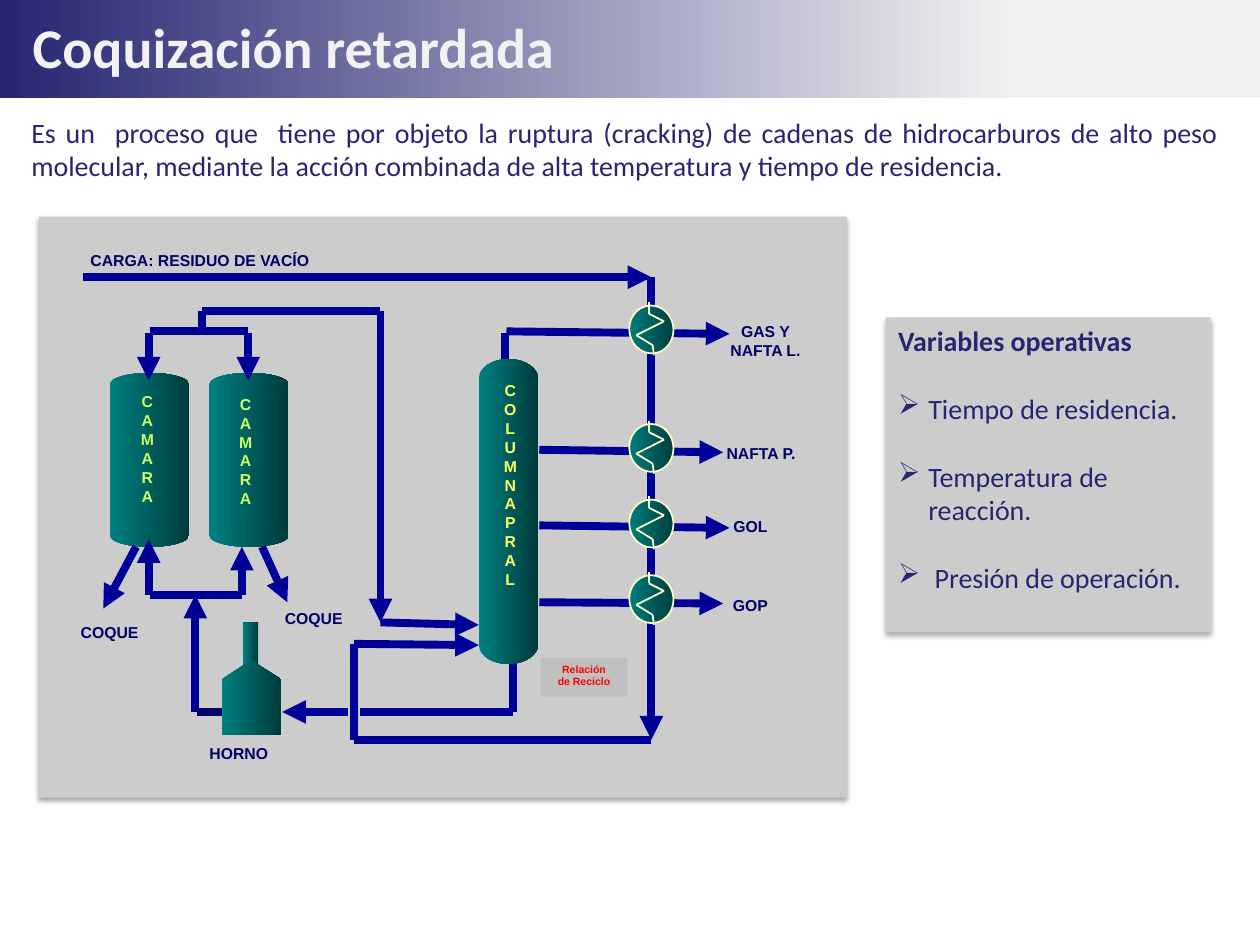
from dataclasses import dataclass
from itertools import pairwise

from pptx import Presentation
from pptx import util as u
from pptx.dml.color import RGBColor
from pptx.enum import shapes, text
from pptx.oxml import parse_xml
from pptx.oxml.ns import nsdecls, qn
from pptx.oxml.xmlchemy import OxmlElement

# Grid of 100 columns by 75 rows
WIDTH, HEIGHT = u.Inches(10), u.Inches(7.5)
COL, ROW = WIDTH / 100, HEIGHT / 75


@dataclass(frozen=True)
class Theme:
    navy: str = "262673"
    pale: str = "F2F2F2"
    panel: str = "CCCCCC"
    teal: str = "008080"
    deep_teal: str = "003B3B"
    pipe: str = "000099"
    label: str = "000066"
    coil: str = "FFFFCC"
    column_text: str = "FFFF66"
    drum_text: str = "CCFF66"
    note: str = "C0C0C0"
    alert: str = "FF0000"
    body_font: str = "Calibri"
    label_font: str = "Arial"
    title_size: float = 32
    body_size: float = 16
    label_size: float = 9
    note_size: float = 6
    pipe_width: float = 4.5
    coil_width: float = 1


T = Theme()
Box = tuple[float, float, float, float]  # column, row, columns, rows
Point = tuple[float, float]
KIND = shapes.MSO_SHAPE


@dataclass(frozen=True)
class Pipe:
    points: tuple[Point, ...]
    arrow: bool = True
    color: str = T.pipe
    width: float = T.pipe_width


@dataclass(frozen=True)
class Vessel:
    left: float
    top: float
    width: float
    height: float
    cap: float


@dataclass(frozen=True)
class Label:
    words: str
    box: Box
    color: str = T.label
    size: float = T.label_size
    wrap: bool = False


def place(box: Box) -> list[int]:
    return [round(n * unit) for n, unit in zip(box, (COL, ROW, COL, ROW))]


def add_solid(group, kind, box: Box, fill: str, end: str | None = None, stop: float = 1):
    """Add a preset shape, plain or shaded from left to right."""
    sp = group.add_shape(kind, *place(box))
    sp.shadow.inherit = False
    sp.line.fill.background()
    if end is None:
        sp.fill.solid()
        sp.fill.fore_color.rgb = RGBColor.from_string(fill)
        return sp
    sp.fill.gradient()
    sp.fill.gradient_angle = 0
    for mark, color, position in zip(sp.fill.gradient_stops, (fill, end), (0, stop)):
        mark.color.rgb = RGBColor.from_string(color)
        mark.position = position
    sp._element.spPr.find(qn("a:gradFill")).set("rotWithShape", "0")
    return sp


def add_panel(group, box: Box) -> None:
    sp = add_solid(group, KIND.RECTANGLE, box, T.panel)
    sp._element.spPr.find(qn("a:effectLst")).append(parse_xml(
        f'<a:outerShdw {nsdecls("a")} blurRad="{u.Pt(3.1)}" dist="{u.Pt(1.8)}" dir="5400000">'
        '<a:srgbClr val="000000"><a:alpha val="35000"/></a:srgbClr></a:outerShdw>'))


def add_steel(group, kind, box: Box):
    return add_solid(group, kind, box, T.teal, T.deep_teal)


def add_vessel(group, v: Vessel) -> None:
    half = v.cap / 2
    add_steel(group, KIND.RECTANGLE, (v.left, v.top + half, v.width, v.height - v.cap))
    for row in (v.top, v.top + v.height - v.cap):
        add_steel(group, KIND.OVAL, (v.left, row, v.width, v.cap))


def add_pipe(group, pipe: Pipe) -> None:
    for start, end in pairwise(pipe.points):
        line = group.add_connector(shapes.MSO_CONNECTOR.STRAIGHT, *place(start + end))
        line.line.width = u.Pt(pipe.width)
        line.line.color.rgb = RGBColor.from_string(pipe.color)
        line._element.spPr.append(OxmlElement("a:effectLst"))
    if pipe.arrow:
        tip = OxmlElement("a:tailEnd")
        tip.set("type", "triangle")
        line.line._get_or_add_ln().append(tip)


def add_exchanger(group, top: float) -> None:
    sp = add_steel(group, KIND.OVAL, (49.8, top, 3.8, 3.5))
    sp.rotation = 263
    sp.line.color.rgb = RGBColor.from_string(T.coil)
    sp.line.width = u.Pt(T.coil_width)
    coil = ((51.9, 3.8), (51.8, 3), (50.5, 2.2), (52.7, 1.1), (51.5, 0.5), (51.5, -0.4))
    add_pipe(group, Pipe(tuple((x, top + y) for x, y in coil), False, T.coil, T.coil_width))


def style(p, font: str, size: float, color: str, bold: bool, align) -> None:
    p.alignment = align
    for r in p.runs:
        r.font.name, r.font.size, r.font.bold = font, u.Pt(size), bold
        r.font.color.rgb = RGBColor.from_string(color)


def write_label(sp, label: Label) -> None:
    tf = sp.text_frame
    tf.text = label.words
    tf.word_wrap = label.wrap
    tf.vertical_anchor = text.MSO_ANCHOR.TOP
    tf.margin_left = tf.margin_right = u.Inches(0.08)
    tf.margin_top = tf.margin_bottom = u.Inches(0.04)
    for p in tf.paragraphs:
        style(p, T.label_font, label.size, label.color, True, text.PP_ALIGN.CENTER)


EXCHANGERS = (24.4, 33.8, 39.8, 45.8)
DRUMS = [Vessel(left, 29.6, 6.3, 13.8, 1.8) for left in (8.7, 16.6)]
COLUMN = Vessel(38, 28.5, 4.7, 24.2, 3.1)

# Column cuts and preheat line, behind the vessels
BACK_PIPES = [
    Pipe(((42.8, 47.8), (57.4, 47.9))),
    Pipe(((42.8, 35.7), (57.4, 35.9))),
    Pipe(((40.2, 26.3), (57.9, 26.5))),
    Pipe(((42.8, 41.7), (57.9, 41.9))),
    Pipe(((51.7, 22), (51.7, 58.7))),
]
FRONT_PIPES = [
    Pipe(((6.6, 22), (51.7, 22))),  # feed
    Pipe(((51.7, 58.7), (28.1, 58.7), (28.1, 51.1), (38, 51.2))),
    Pipe(((11.9, 26.3), (19.7, 26.3)), False),  # drum vapours
    Pipe(((11.8, 26.4), (11.8, 30.2))),
    Pipe(((19.7, 26.4), (19.7, 30.2))),
    Pipe(((16, 26.3), (16, 24.7), (30.2, 24.7), (30.2, 49.4))),
    Pipe(((30.2, 49.4), (38, 49.6))),
    Pipe(((40.1, 28.5), (40.1, 26.4)), False),  # column top and bottom
    Pipe(((40.7, 52.7), (40.7, 56.5), (28.6, 56.5)), False),
    Pipe(((27.6, 56.5), (22.4, 56.5))),
    Pipe(((17.6, 56.5), (15.6, 56.5)), False, T.label),  # furnace outlet
    Pipe(((15.5, 56.5), (15.5, 47.2))),
    Pipe(((11.9, 47.2), (19.2, 47.2)), False),
    Pipe(((11.8, 47.2), (11.8, 42.8))),
    Pipe(((19.2, 47.2), (19.2, 43.4))),
    Pipe(((10.8, 43.4), (8.2, 48.3))),  # coke
    Pipe(((20.8, 43.4), (22.8, 47.8))),
]
LABELS = [
    Label("HORNO", (15.7, 58.6, 6.5, 2.4)),
    Label("CARGA: RESIDUO DE VACÍO", (6.1, 19.5, 19.5, 2.4)),
    Label("COQUE", (5.5, 49, 6.4, 2.4)),
    Label("COQUE", (21.7, 47.9, 6.4, 2.4)),
    Label("GAS Y\nNAFTA L.", (56.8, 25.1, 7.9, 3.9)),
    Label("NAFTA P.", (56.6, 34.8, 7.6, 2.4)),
    Label("GOL", (57.3, 40.6, 4.5, 2.4)),
    Label("GOP", (57.3, 46.9, 4.5, 2.4)),
    Label("\n".join("COLUMNAPRAL"), (39.1, 29.8, 2.8, 19.3), T.column_text),
    Label("CAMARA", (10.3, 30.7, 2.8, 10.1), T.drum_text, wrap=True),
    Label("CAMARA", (18.1, 30.9, 2.8, 10), T.drum_text, wrap=True),
]
RECYCLE = Label("Relación\nde Reciclo", (42.9, 52.2, 6.9, 3.1), T.alert, T.note_size)
INTRO = ("Es un  proceso que  tiene por objeto la ruptura (cracking) de cadenas de hidrocarburos "
         "de alto peso molecular, mediante la acción combinada de alta temperatura y tiempo de residencia.")
VARIABLES = ("Tiempo de residencia.", "Temperatura de reacción.", " Presión de operación.")


def add_heading(slide) -> None:
    banner = add_solid(slide.shapes, KIND.RECTANGLE, (0, 0, 100, 7.8), T.navy, T.pale, 0.81)
    title = slide.shapes.title
    title._element.addprevious(banner._element)
    title.left, title.top, title.width, title.height = place((1.6, 1.6, 66.4, 4.7))
    tf = title.text_frame
    tf.text = "Coquización retardada"
    tf.vertical_anchor = text.MSO_ANCHOR.MIDDLE
    tf.paragraphs[0].line_spacing = 0.95
    style(tf.paragraphs[0], T.body_font, T.title_size, T.pale, True, text.PP_ALIGN.LEFT)
    tf = slide.shapes.add_textbox(*place((1.5, 8.6, 96.2, 6.4))).text_frame
    tf.text, tf.word_wrap = INTRO, True
    tf.vertical_anchor = text.MSO_ANCHOR.MIDDLE
    style(tf.paragraphs[0], T.body_font, T.body_size, T.navy, False, text.PP_ALIGN.JUSTIFY)


def add_diagram(group) -> None:
    add_panel(group, (3.1, 17.2, 64.1, 46.1))
    add_steel(group, KIND.RECTANGLE, (19.3, 49.4, 1.2, 4.2))  # chimney
    for pipe in BACK_PIPES:
        add_pipe(group, pipe)
    for vessel in (COLUMN, *DRUMS):
        add_vessel(group, vessel)
    for top in EXCHANGERS:
        add_exchanger(group, top)
    add_steel(group, KIND.ISOSCELES_TRIANGLE, (17.6, 52.4, 4.7, 1.5))  # furnace
    add_steel(group, KIND.RECTANGLE, (17.6, 53.9, 4.7, 4.4))
    for pipe in FRONT_PIPES:
        add_pipe(group, pipe)
    for label in LABELS:
        write_label(group.add_textbox(*place(label.box)), label)
    write_label(add_solid(group, KIND.RECTANGLE, RECYCLE.box, T.note), RECYCLE)


def add_variables(group) -> None:
    add_panel(group, (70.3, 25.2, 25.8, 25))
    tf = group.add_textbox(*place((70.3, 25.2, 25.8, 25.6))).text_frame
    tf.word_wrap = True
    tf.text = "Variables operativas"
    style(tf.paragraphs[0], T.body_font, T.body_size, T.navy, True, text.PP_ALIGN.JUSTIFY)
    for words in VARIABLES:
        p = tf.add_paragraph()
        p.text = words
        p.space_before = u.Pt(19.5)
        style(p, T.body_font, T.body_size, T.navy, False, text.PP_ALIGN.LEFT)
        pPr = p._p.get_or_add_pPr()
        pPr.set("marL", str(u.Inches(0.24)))
        pPr.set("indent", str(-u.Inches(0.24)))
        bullet = OxmlElement("a:buChar")
        bullet.set("char", "➢")
        pPr.append(bullet)


def main() -> None:
    prs = Presentation()
    prs.slide_width, prs.slide_height = WIDTH, HEIGHT
    slide = prs.slides.add_slide(prs.slide_layouts[5])
    add_heading(slide)
    add_diagram(slide.shapes.add_group_shape().shapes)
    add_variables(slide.shapes.add_group_shape().shapes)
    prs.save("out.pptx")


if __name__ == "__main__":
    main()
